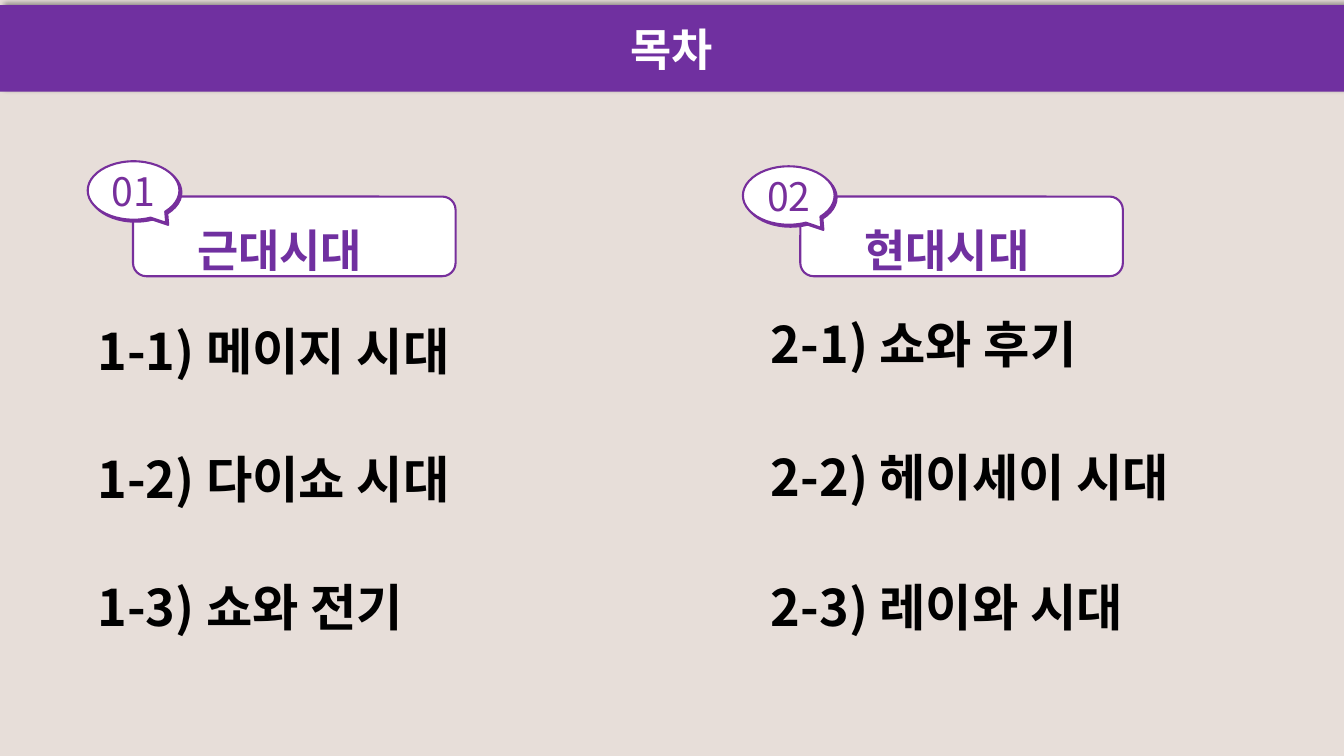
import pptx
import pptx.util
import pptx.dml.color
import pptx.enum.shapes
import pptx.enum.text
import pptx.oxml
import pptx.oxml.ns

Pt = pptx.util.Pt
Color = pptx.dml.color.RGBColor.from_string
Shapes = pptx.enum.shapes.MSO_SHAPE
Align = pptx.enum.text.PP_ALIGN
Anchor = pptx.enum.text.MSO_ANCHOR

# Content: each chapter with its left edges and tops in points
TITLE = "목차"
CHAPTERS = [
    {"number": "01", "name": "근대시대", "badge": (62.64, 115.2), "label_left": 95.04,
     "topics_left": 62.64,
     "topics": [("1-1) 메이지 시대", 225.36), ("1-2) 다이쇼 시대", 316.8),
                ("1-3) 쇼와 전기", 408.24)]},
    {"number": "02", "name": "현대시대", "badge": (530.64, 118.8), "label_left": 571.68,
     "topics_left": 543.6,
     "topics": [("2-1) 쇼와 후기", 220.32), ("2-2) 헤이세이 시대", 315.36),
                ("2-3) 레이와 시대", 408.24)]},
]

# Theme and layout
THEME = {
    "font": "Noto Sans CJK KR", "background": "E7DED9", "purple": "7030A0",
    "outline": "772F9C", "white": "FFFFFF", "black": "000000", "line": 1.5,
    "title": {"size": Pt(32), "bold": True},
    "number": {"size": Pt(28), "bold": False},
    "topic": {"size": Pt(36), "bold": True},
}
SLIDE_SIZE = (960, 540)
BAND = (0, 3.6, 960, 61.92)
LABEL_TOP, LABEL_SIZE = 140.4, (230.4, 56.88)
BADGE_SIZE = (65.52, 41.76)
TOPIC_SIZE = (338.4, 51.12)


def write(shape, text, style, color, **paragraph_format):
    paragraph = shape.text_frame.paragraphs[0]
    for name, value in paragraph_format.items():
        setattr(paragraph, name, value)
    run = paragraph.add_run()
    run.text = text
    for name, value in {**THEME[style], "name": THEME["font"]}.items():
        setattr(run.font, name, value)
    run.font.color.rgb = Color(THEME[color])
    east_asian = pptx.oxml.parse_xml(
        f'<a:ea {pptx.oxml.ns.nsdecls("a")} typeface="{THEME["font"]}"/>')
    run.font._element.append(east_asian)
    return paragraph


def add_panel(slide, kind, box, fill, outline=None):
    shape = slide.shapes.add_shape(kind, *map(Pt, box))
    shape.shadow.inherit = False
    shape.fill.solid()
    shape.fill.fore_color.rgb = Color(THEME[fill])
    if outline:
        shape.line.color.rgb = Color(THEME[outline])
        shape.line.width = Pt(THEME["line"])
    else:
        shape.line.fill.background()
    shape.text_frame.word_wrap = True
    shape.text_frame.vertical_anchor = Anchor.MIDDLE
    return shape


def add_shadow(shape, color, opacity, blur, distance, angle):
    effects = shape._element.spPr.find(pptx.oxml.ns.qn("a:effectLst"))
    effects.append(pptx.oxml.parse_xml(
        f'<a:outerShdw {pptx.oxml.ns.nsdecls("a")} blurRad="{Pt(blur)}" '
        f'dist="{Pt(distance)}" dir="{angle * 60000}" algn="ctr" rotWithShape="0">'
        f'<a:srgbClr val="{THEME[color]}"><a:alpha val="{opacity * 1000}"/></a:srgbClr>'
        f'</a:outerShdw>'))


def add_chapter(slide, chapter):
    # Chapter name
    label = add_panel(slide, Shapes.ROUNDED_RECTANGLE,
                      (chapter["label_left"], LABEL_TOP, *LABEL_SIZE), "white", "outline")
    paragraph = write(label, chapter["name"], "title", "purple",
                      level=1, line_spacing=1.5, alignment=Align.LEFT)
    properties = paragraph._p.get_or_add_pPr()
    properties.set("marL", str(Pt(36)))
    properties.set("indent", "0")

    # Number in a speech bubble
    badge = add_panel(slide, Shapes.OVAL_CALLOUT,
                      (*chapter["badge"], *BADGE_SIZE), "white", "outline")
    badge.adjustments[0], badge.adjustments[1] = 0.356, 0.554
    add_shadow(badge, "outline", opacity=100, blur=0, distance=2, angle=45)
    write(badge, chapter["number"], "number", "outline", alignment=Align.CENTER)

    # Topics
    for text, top in chapter["topics"]:
        box = slide.shapes.add_textbox(
            *map(Pt, (chapter["topics_left"], top, *TOPIC_SIZE)))
        box.text_frame.word_wrap = True
        box.text_frame.auto_size = pptx.enum.text.MSO_AUTO_SIZE.SHAPE_TO_FIT_TEXT
        write(box, text, "topic", "black")


def main():
    presentation = pptx.Presentation()
    presentation.slide_width, presentation.slide_height = map(Pt, SLIDE_SIZE)
    slide = presentation.slides.add_slide(presentation.slide_layouts[6])
    slide.background.fill.solid()
    slide.background.fill.fore_color.rgb = Color(THEME["background"])

    # Title band
    band = add_panel(slide, Shapes.RECTANGLE, BAND, "purple")
    add_shadow(band, "black", opacity=40, blur=4, distance=3, angle=315)
    write(band, TITLE, "title", "white", alignment=Align.CENTER)

    for chapter in CHAPTERS:
        add_chapter(slide, chapter)
    presentation.save("out.pptx")


if __name__ == "__main__":
    main()
